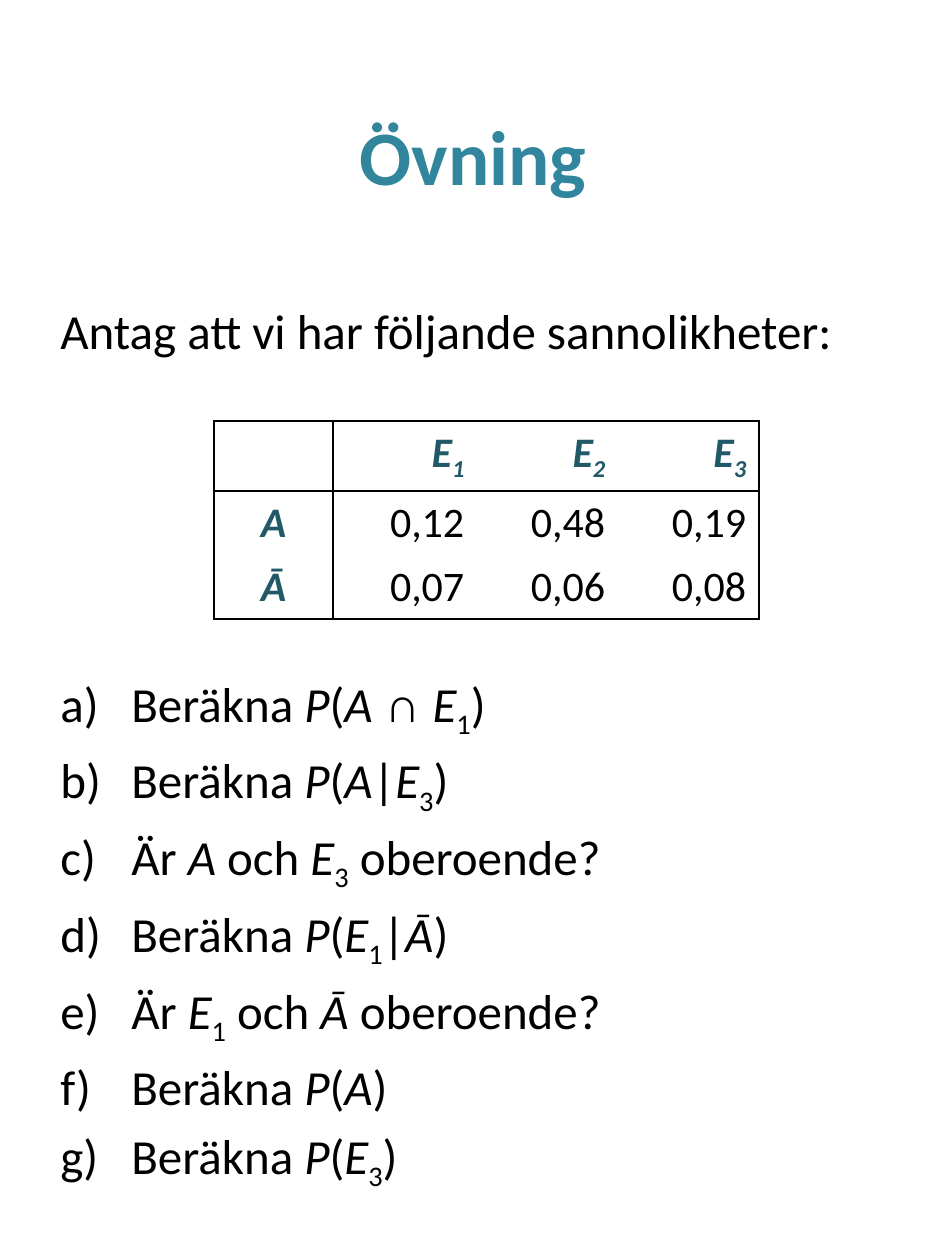
"""Build the exercise slide on probabilities and independence."""
from dataclasses import dataclass, replace

from lxml.etree import SubElement
from pptx import Presentation
from pptx.dml.color import RGBColor
from pptx.enum.text import MSO_ANCHOR as Anchor, PP_ALIGN as Align
from pptx.oxml.ns import qn
from pptx.util import Emu, Pt

PX = 914400 / 126
TEAL = RGBColor(0x31, 0x85, 0x9C)
DARK_TEAL = RGBColor(0x21, 0x59, 0x68)
BLACK = RGBColor(0, 0, 0)
FONT = "Calibri"
SYMBOL_FONT = "Times New Roman"


@dataclass(frozen=True)
class Run:
    text: str
    italic: bool = False
    subscript: bool = False
    font: str = FONT


@dataclass(frozen=True)
class Box:
    left: int
    top: int
    width: int
    height: int

    def emu(self) -> tuple:
        return tuple(px(side) for side in (self.left, self.top, self.width, self.height))


def px(length: int) -> Emu:
    return Emu(round(length * PX))


def event(number: int) -> tuple:
    return Run("E", italic=True), Run(str(number), subscript=True)


def probability(*inside: Run) -> tuple:
    return Run("Beräkna "), Run("P", italic=True), Run("("), *inside, Run(")")


def independence(first: tuple, second: tuple) -> tuple:
    return Run("Är "), *first, Run(" och "), *second, Run(" oberoende?")


A = Run("A", italic=True)
NOT_A = Run("Ā", italic=True)
BAR = Run("|")
INTERSECTION = Run(" ∩ ", font=SYMBOL_FONT)

TITLE_BOX = Box(48, 50, 850, 210)
INTRO_BOX = Box(48, 294, 822, 72)
QUESTIONS_BOX = Box(48, 667, 822, 532)
TABLE_BOX = Box(214, 421, 546, 198)
COLUMN_WIDTHS = (119, 144, 141, 141)
ROW_HEIGHTS = (70, 64, 64)
QUESTION_INDENT = 71

PROBABILITIES = (
    ((), event(1), event(2), event(3)),
    ((A,), (Run("0,12"),), (Run("0,48"),), (Run("0,19"),)),
    ((NOT_A,), (Run("0,07"),), (Run("0,06"),), (Run("0,08"),)),
)
QUESTIONS = (
    probability(A, INTERSECTION, *event(1)),
    probability(A, BAR, *event(3)),
    independence((A,), event(3)),
    probability(*event(1), BAR, NOT_A),
    independence(event(1), (NOT_A,)),
    probability(A),
    probability(*event(3)),
)


def add_runs(paragraph, runs: tuple, size: int, color: RGBColor, bold: bool = False) -> None:
    for item in runs:
        run = paragraph.add_run()
        run.text = item.text
        font = run.font
        font.name, font.size, font.bold, font.italic = item.font, Pt(size), bold, item.italic
        font.color.rgb = color
        if item.subscript:
            font._element.set("baseline", "-25000")


def add_text_frame(slide, box: Box):
    frame = slide.shapes.add_textbox(*box.emu()).text_frame
    frame.word_wrap = True
    return frame


def add_title(slide) -> None:
    title = slide.shapes.title
    title.left, title.top, title.width, title.height = TITLE_BOX.emu()
    title.text_frame.vertical_anchor = Anchor.MIDDLE
    heading = title.text_frame.paragraphs[0]
    heading.alignment = Align.CENTER
    add_runs(heading, (Run("Övning"),), 44, TEAL, bold=True)


def add_questions(slide) -> None:
    frame = add_text_frame(slide, QUESTIONS_BOX)
    for number, question in enumerate(QUESTIONS):
        paragraph = frame.add_paragraph() if number else frame.paragraphs[0]
        if number:
            paragraph.space_before = Pt(5.6)
        properties = paragraph._p.get_or_add_pPr()
        properties.set("marL", str(px(QUESTION_INDENT)))
        properties.set("indent", str(-px(QUESTION_INDENT)))
        SubElement(properties, qn("a:buFont"), typeface=FONT)
        SubElement(properties, qn("a:buAutoNum"), type="alphaLcParenR")
        add_runs(paragraph, question, 28, BLACK)


def set_borders(cell, row: int, column: int) -> None:
    last_row, last_column = len(ROW_HEIGHTS) - 1, len(COLUMN_WIDTHS) - 1
    drawn = {
        "a:lnL": column <= 1,
        "a:lnR": column in (0, last_column),
        "a:lnT": row <= 1,
        "a:lnB": row in (0, last_row),
    }
    properties = cell._tc.get_or_add_tcPr()
    for tag, visible in drawn.items():
        line = SubElement(properties, qn(tag), w=str(Pt(1)))
        if visible:
            fill = SubElement(line, qn("a:solidFill"))
            SubElement(fill, qn("a:srgbClr"), val=str(BLACK))
        else:
            SubElement(line, qn("a:noFill"))


def add_probability_table(slide) -> None:
    rows, columns = len(ROW_HEIGHTS), len(COLUMN_WIDTHS)
    table = slide.shapes.add_table(rows, columns, *TABLE_BOX.emu()).table
    table.first_row = table.horz_banding = False
    for column, width in zip(table.columns, COLUMN_WIDTHS):
        column.width = px(width)
    for row, height in zip(table.rows, ROW_HEIGHTS):
        row.height = px(height)
    for row, entries in enumerate(PROBABILITIES):
        for column, runs in enumerate(entries):
            cell = table.cell(row, column)
            set_borders(cell, row, column)
            cell.fill.background()
            cell.vertical_anchor = Anchor.MIDDLE
            paragraph = cell.text_frame.paragraphs[0]
            paragraph.alignment = Align.RIGHT if column else Align.CENTER
            if row and column:
                add_runs(paragraph, runs, 24, BLACK)
            else:
                labels = tuple(replace(run, italic=True) for run in runs)
                add_runs(paragraph, labels, 24, DARK_TEAL, bold=True)


def main() -> None:
    deck = Presentation()
    deck.slide_width, deck.slide_height = px(945), px(1260)
    slide = deck.slides.add_slide(deck.slide_layouts[5])
    add_title(slide)
    intro = add_text_frame(slide, INTRO_BOX).paragraphs[0]
    add_runs(intro, (Run("Antag att vi har följande sannolikheter:"),), 28, BLACK)
    add_probability_table(slide)
    add_questions(slide)
    deck.save("out.pptx")


if __name__ == "__main__":
    main()
